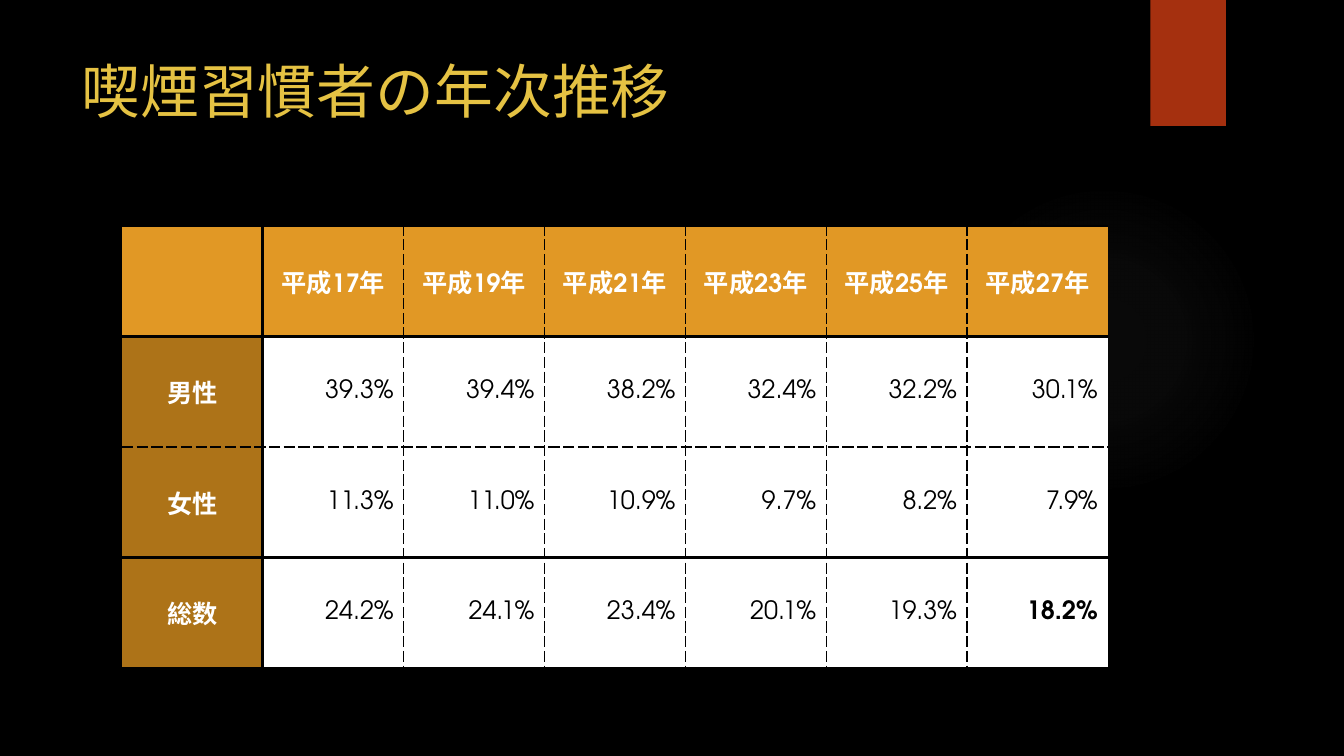
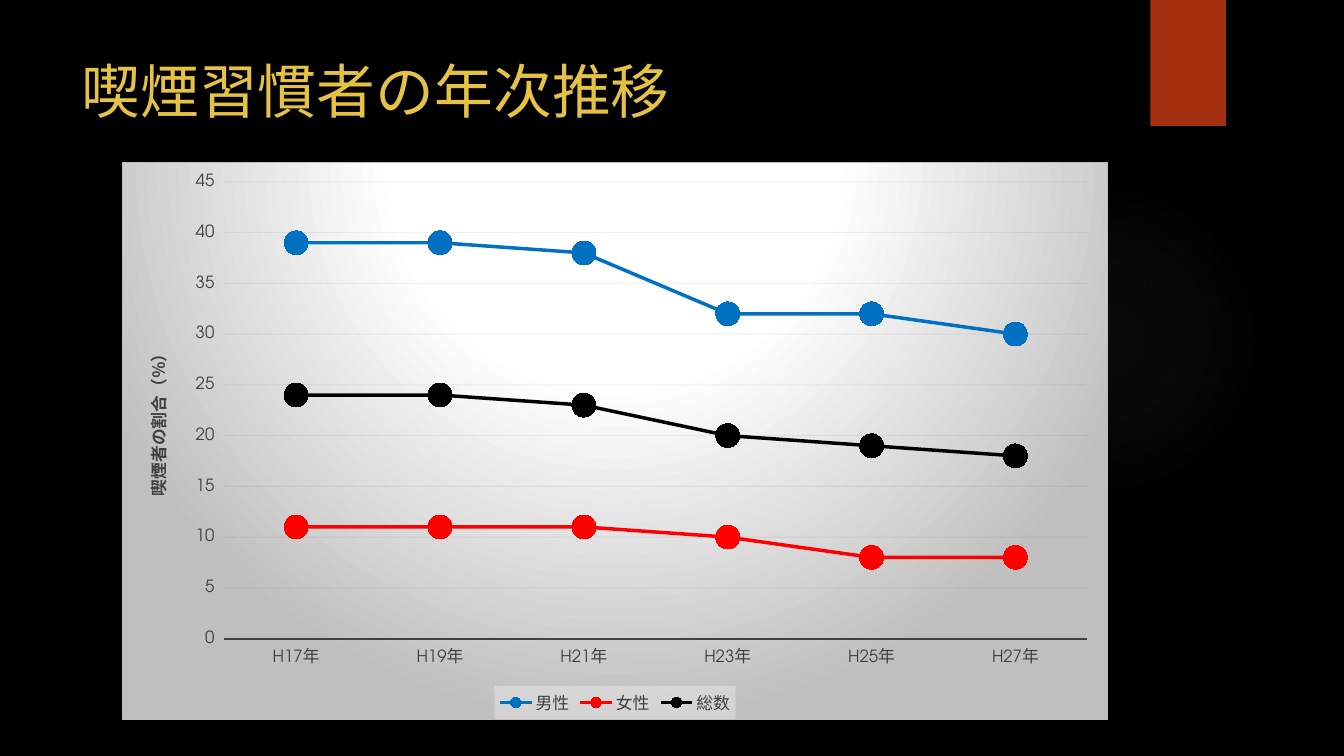
from pptx import Presentation
from pptx.chart.data import CategoryChartData
from pptx.dml.color import RGBColor
from pptx.enum.chart import (XL_CHART_TYPE, XL_LEGEND_POSITION as LEGEND,
                             XL_MARKER_STYLE, XL_TICK_MARK as TICK)
from pptx.enum.shapes import MSO_SHAPE
from pptx.enum.text import MSO_ANCHOR as ANCHOR, PP_ALIGN as ALIGN
from pptx.oxml import parse_xml
from pptx.oxml.ns import nsdecls, qn
from pptx.util import Inches, Pt

# Shared look
FONT = "TeX Gyre Adventor"
BLACK = RGBColor(0x00, 0x00, 0x00)
WHITE = RGBColor(0xFF, 0xFF, 0xFF)
GOLD = RGBColor(0xE5, 0xC2, 0x43)
RUST = RGBColor(0xA5, 0x30, 0x0F)
ORANGE = RGBColor(0xE1, 0x98, 0x25)
BROWN = RGBColor(0xAD, 0x73, 0x18)
DARK_GRAY = RGBColor(0x40, 0x40, 0x40)
GRID_GRAY = RGBColor(0x0D, 0x0D, 0x0D)
BLUE = RGBColor(0x00, 0x70, 0xC0)
RED = RGBColor(0xFF, 0x00, 0x00)

# Content
TITLE = "喫煙習慣者の年次推移"
YEARS = [17, 19, 21, 23, 25, 27]
RATES = {
    "男性": [39.3, 39.4, 38.2, 32.4, 32.2, 30.1],
    "女性": [11.3, 11.0, 10.9, 9.7, 8.2, 7.9],
    "総数": [24.2, 24.1, 23.4, 20.1, 19.3, 18.2],
}
SERIES_COLORS = [BLUE, RED, BLACK]
LEFT, WIDTH = Inches(1.21), Inches(9.78)
CHART_HEIGHT = Inches(5.53)


def style_font(font, size, color, bold=False):
    font.name = FONT
    font.size = Pt(size)
    font.color.rgb = color
    font.bold = bold


def write_text(frame, text, size=18, color=BLACK, bold=False, align=ALIGN.LEFT):
    paragraph = frame.paragraphs[0]
    paragraph.alignment = align
    run = paragraph.add_run()
    run.text = text
    style_font(run.font, size, color, bold)


def radial_gradient(stops, focus):
    """Stops are (position %, colour, opacity %); focus is l, t, r, b in %."""
    stop_xml = "".join(
        f'<a:gs pos="{position * 1000}"><a:srgbClr val="{color}">'
        f'<a:alpha val="{opacity * 1000}"/></a:srgbClr></a:gs>'
        for position, color, opacity in stops)
    sides = " ".join(f'{side}="{value * 1000}"' for side, value in zip("ltrb", focus))
    return (f'<a:gradFill {nsdecls("a")} rotWithShape="1"><a:gsLst>{stop_xml}</a:gsLst>'
            f'<a:path path="circle"><a:fillToRect {sides}/></a:path></a:gradFill>')


def add_plain_shape(slide, kind, left, top, width, height, color):
    shape = slide.shapes.add_shape(kind, Inches(left), Inches(top),
                                   Inches(width), Inches(height))
    shape.shadow.inherit = False
    shape.line.fill.background()
    shape.fill.solid()
    shape.fill.fore_color.rgb = color
    return shape


def add_themed_slide(presentation, title):
    slide = presentation.slides.add_slide(presentation.slide_layouts[6])
    slide.background.fill.solid()
    slide.background.fill.fore_color.rgb = BLACK

    # Soft glow and ribbon
    glow = add_plain_shape(slide, MSO_SHAPE.OVAL, 9.41, 1.83, 3.08, 3.08, BLACK)
    solid_fill = glow._element.spPr.find(qn("a:solidFill"))
    stops = [(0, "848484", 7), (36, "848484", 6), (69, "848484", 0)]
    glow._element.spPr.replace(
        solid_fill, parse_xml(radial_gradient(stops, (50, 50, 50, 50))))
    add_plain_shape(slide, MSO_SHAPE.RECTANGLE, 11.41, 0, 0.75, 1.25, RUST)

    # Title
    box = slide.shapes.add_textbox(Inches(0.71), Inches(0.49), Inches(10.29), Inches(1.53))
    box.text_frame.word_wrap = True
    write_text(box.text_frame, title, size=42, color=GOLD)
    return slide


def set_border(cell, side, width, dash="solid"):
    """Draw one side (L, R, T or B) of a cell; zero width leaves it open."""
    fill = f'<a:solidFill><a:srgbClr val="{BLACK}"/></a:solidFill>' if width else "<a:noFill/>"
    cell._tc.get_or_add_tcPr().append(parse_xml(
        f'<a:ln{side} {nsdecls("a")} w="{Pt(width)}">{fill}'
        f'<a:prstDash val="{dash}"/></a:ln{side}>'))


def add_rate_table(slide):
    rows = [[""] + [f"平成{year}年" for year in YEARS]]
    rows += [[name] + [f"{rate:.1f}%" for rate in rates] for name, rates in RATES.items()]
    row_count, column_count = len(rows), len(rows[0])
    table = slide.shapes.add_table(row_count, column_count, LEFT, Inches(2.24),
                                   WIDTH, Inches(4.39)).table
    table.horz_banding = False

    # Border rules by grid line; every other line is dashed
    dashed = (1, "sysDash")
    vertical = {0: (0,), 1: (2.25,), column_count: (0,)}
    horizontal = {0: (2,), 1: (2.25,), row_count - 1: (2.25,), row_count: (2,)}

    for i, row in enumerate(rows):
        for j, text in enumerate(row):
            cell = table.cell(i, j)
            set_border(cell, "L", *vertical.get(j, dashed))
            set_border(cell, "R", *vertical.get(j + 1, dashed))
            set_border(cell, "T", *horizontal.get(i, dashed))
            set_border(cell, "B", *horizontal.get(i + 1, dashed))
            heading = i == 0 or j == 0
            latest_total = i == row_count - 1 and j == column_count - 1
            cell.fill.solid()
            cell.fill.fore_color.rgb = ORANGE if i == 0 else BROWN if j == 0 else WHITE
            cell.vertical_anchor = ANCHOR.MIDDLE
            if text:
                write_text(cell.text_frame, text, bold=heading or latest_total,
                           color=WHITE if heading else BLACK,
                           align=ALIGN.CENTER if heading else ALIGN.RIGHT)


def set_area_format(element, content):
    """Give a chart part its fill and line, ahead of its text properties."""
    element.find(qn("c:txPr")).addprevious(
        parse_xml(f'<c:spPr {nsdecls("c", "a")}>{content}</c:spPr>'))


def style_axes(chart):
    category_axis, value_axis = chart.category_axis, chart.value_axis
    for axis in (category_axis, value_axis):
        style_font(axis.tick_labels.font, 12, DARK_GRAY)
        axis.minor_tick_mark = TICK.NONE
    category_axis.major_tick_mark = TICK.NONE
    category_axis.format.line.color.rgb = DARK_GRAY
    category_axis.format.line.width = Pt(1.5)

    value_axis.minimum_scale, value_axis.maximum_scale = 0, 45
    value_axis.major_unit = 5
    value_axis.major_tick_mark = TICK.OUTSIDE
    value_axis.format.line.fill.background()
    write_text(value_axis.axis_title.text_frame, "喫煙者の割合（％）",
               size=12, color=DARK_GRAY, bold=True, align=ALIGN.CENTER)

    # Faint gridlines
    grid_line = value_axis.major_gridlines.format.line
    grid_line.color.rgb = GRID_GRAY
    grid_line.width = Pt(0.75)
    gridlines = chart._chartSpace.find(".//" + qn("c:majorGridlines"))
    gridlines.find(".//" + qn("a:srgbClr")).append(
        parse_xml(f'<a:alpha {nsdecls("a")} val="6000"/>'))


def add_rate_chart(slide):
    data = CategoryChartData(number_format="General")
    data.categories = [f"H{year}年" for year in YEARS]
    for name, rates in RATES.items():
        data.add_series(name, [round(rate) for rate in rates])
    chart = slide.shapes.add_chart(XL_CHART_TYPE.LINE_MARKERS, LEFT, Inches(1.61),
                                   WIDTH, CHART_HEIGHT, data).chart
    chart.has_title = False
    style_font(chart.font, 10, DARK_GRAY)
    style_axes(chart)

    # Lines and markers
    chart.plots[0].vary_by_categories = False
    for series, color in zip(chart.plots[0].series, SERIES_COLORS):
        series.smooth = False
        series.format.line.color.rgb = color
        series.format.line.width = Pt(2.5)
        marker = series.marker
        marker.style = XL_MARKER_STYLE.CIRCLE
        marker.size = 17
        marker.format.fill.solid()
        marker.format.fill.fore_color.rgb = color
        marker.format.line.fill.background()

    # Legend
    chart.has_legend = True
    legend = chart.legend
    legend.position = LEGEND.BOTTOM
    legend.include_in_layout = False
    style_font(legend.font, 12, DARK_GRAY)
    set_area_format(legend._element, '<a:solidFill><a:srgbClr val="F2F2F2">'
                    '<a:alpha val="39000"/></a:srgbClr></a:solidFill>')

    # Chart background
    stops = [(0, "FFFFFF", 100), (39, "FFFFFF", 100), (100, "BFBFBF", 100)]
    set_area_format(chart._chartSpace, radial_gradient(stops, (50, -80, 50, 180))
                    + f'<a:ln w="{Pt(0.75)}"><a:solidFill><a:srgbClr val="BFBFBF"/>'
                    '</a:solidFill></a:ln>')

    # Plot position, turned into shares of the chart
    plot_area = chart._chartSpace.find(".//" + qn("c:plotArea"))
    for layout in plot_area.findall(qn("c:layout")):
        plot_area.remove(layout)
    shares = {"x": Inches(1.01) / WIDTH, "y": Inches(0.19) / CHART_HEIGHT,
              "w": Inches(8.57) / WIDTH, "h": Inches(4.54) / CHART_HEIGHT}
    share_xml = "".join(f'<c:{key} val="{share:.4f}"/>' for key, share in shares.items())
    plot_area.insert(0, parse_xml(
        f'<c:layout {nsdecls("c")}><c:manualLayout><c:layoutTarget val="inner"/>'
        f'<c:xMode val="edge"/><c:yMode val="edge"/>{share_xml}</c:manualLayout></c:layout>'))


def main():
    presentation = Presentation()
    presentation.slide_width = Inches(13.33)
    presentation.slide_height = Inches(7.5)
    for add_content in (add_rate_table, add_rate_chart):
        add_content(add_themed_slide(presentation, TITLE))
    presentation.save("out.pptx")


if __name__ == "__main__":
    main()
